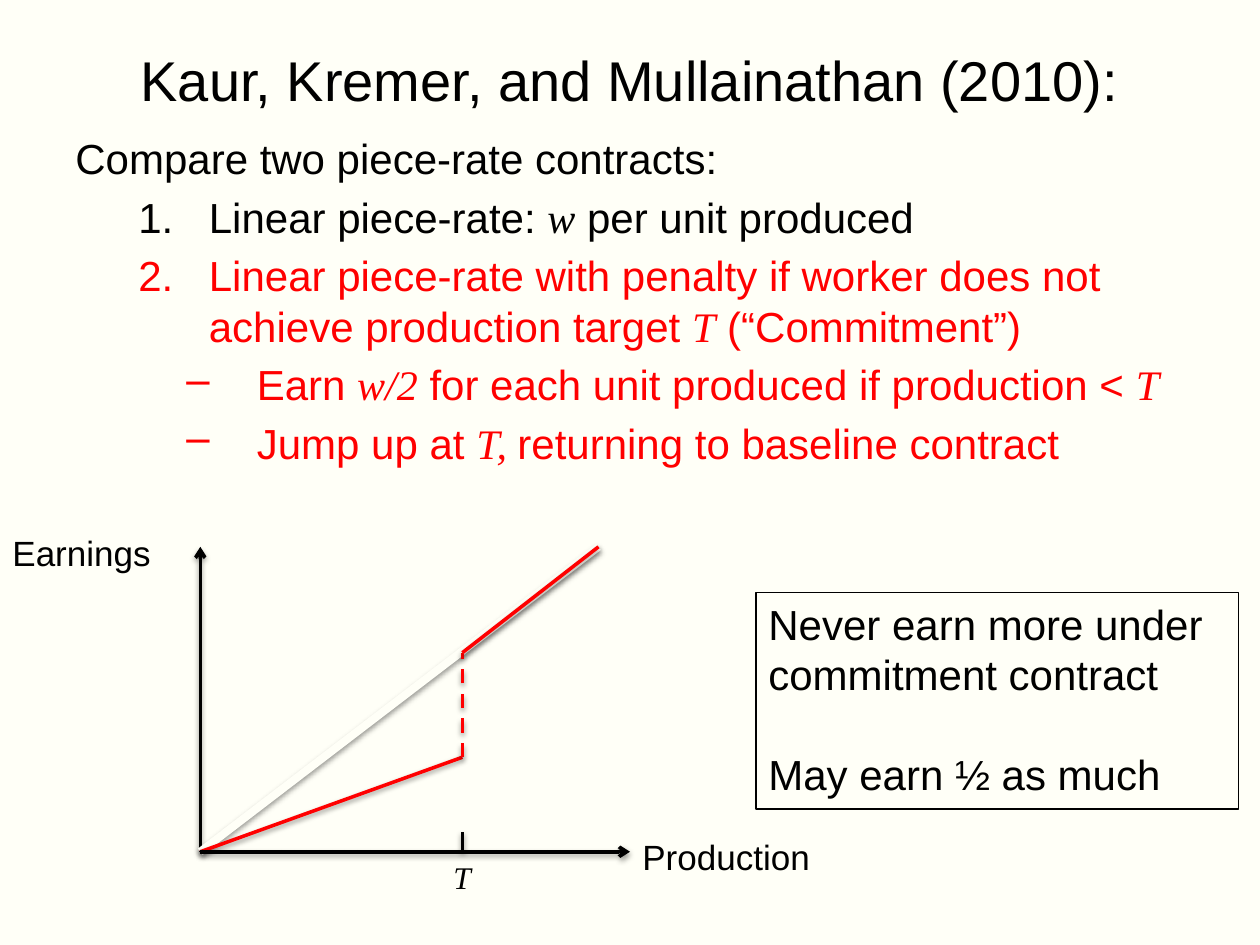
from lxml import etree
from pptx import Presentation
from pptx.dml.color import RGBColor
from pptx.enum import dml, shapes, text
from pptx.oxml import ns
from pptx.util import Inches, Pt

BLACK = RGBColor(0x00, 0x00, 0x00)
RED = RGBColor(0xFF, 0x00, 0x00)
CREAM = RGBColor(0xFF, 0xFF, 0xF7)
SANS, SERIF = "Arial", "Times New Roman"


def add_runs(p, parts, size, color=BLACK):
    """Add the parts in turn; those between asterisks are serif italic."""
    for i, part in enumerate(parts.split("*")):
        if part:
            r = p.add_run()
            r.text = part
            r.font.size = Pt(size)
            r.font.name = SERIF if i % 2 else SANS
            r.font.italic = bool(i % 2)
            r.font.color.rgb = color


def add_line(start, end, color=BLACK, width=2, dashed=False, arrow=False):
    ends = [Inches(v) for v in start + end]
    line = slide.shapes.add_connector(shapes.MSO_CONNECTOR.STRAIGHT, *ends)
    line.line.color.rgb = color
    line.line.width = Pt(width)
    if dashed:
        line.line.dash_style = dml.MSO_LINE.DASH
    if arrow:
        etree.SubElement(line.line._get_or_add_ln(), ns.qn("a:tailEnd"), type="arrow")
    effects = etree.SubElement(line._element.spPr, ns.qn("a:effectLst"))
    shadow = etree.SubElement(effects, ns.qn("a:outerShdw"), blurRad=str(Pt(3.1)),
                              dist=str(Pt(1.6)), dir="5400000", rotWithShape="0")
    tint = etree.SubElement(shadow, ns.qn("a:srgbClr"), val="000000")
    etree.SubElement(tint, ns.qn("a:alpha"), val="38000")


prs = Presentation()
prs.slide_width, prs.slide_height = Inches(10), Inches(7.5)
slide = prs.slides.add_slide(prs.slide_layouts[5])
slide.background.fill.solid()
slide.background.fill.fore_color.rgb = CREAM

# Title
title = slide.shapes.title
title.left, title.top, title.width, title.height = map(Inches, (0.5, 0, 9, 1.25))
title.text_frame.vertical_anchor = text.MSO_ANCHOR.MIDDLE
p = title.text_frame.paragraphs[0]
p.alignment = text.PP_ALIGN.CENTER
add_runs(p, "Kaur, Kremer, and Mullainathan (2010):", 32)

# Contracts: level, left margin, hanging indent, colour, text
contracts = [
    (0, 0.38, 0.38, BLACK, "Compare two piece-rate contracts:"),
    (1, 1.06, 0.56, BLACK, "Linear piece-rate: *w* per unit produced"),
    (1, 1.06, 0.56, RED, "Linear piece-rate with penalty if worker does not "
                         "achieve production target *T* (“Commitment”)"),
    (2, 1.44, 0.56, RED, "Earn *w/2* for each unit produced if production < *T*"),
    (2, 1.44, 0.56, RED, "Jump up at *T, *returning to baseline contract"),
]
bullets = {1: ("a:buAutoNum", {"type": "arabicPeriod"}), 2: ("a:buChar", {"char": "–"})}
body = slide.shapes.add_textbox(Inches(0.5), Inches(1), Inches(9), Inches(4.95))
tf = body.text_frame
tf.word_wrap = True
for i, (level, margin, hang, color, words) in enumerate(contracts):
    p = tf.add_paragraph() if i else tf.paragraphs[0]
    p.level = level
    p.space_before = Pt(4.8)
    pPr = p._p.get_or_add_pPr()
    pPr.set("marL", str(Inches(margin)))
    pPr.set("indent", str(-Inches(hang)))
    if level:
        tag, attributes = bullets[level]
        etree.SubElement(pPr, ns.qn(tag), attributes)
    add_runs(p, words, 24, color)

# Earnings diagram
origin, top = (1.59, 6.76), (4.75, 4.34)
low, high = (3.67, 6.01), (3.67, 5.18)
add_line(origin, (1.59, 4.34), arrow=True)
add_line(origin, top, CREAM, 4.5)
add_line(origin, low, RED)
add_line(low, high, RED, dashed=True)
add_line(high, top, RED)
add_line((3.67, 6.76), (3.67, 6.6))
add_line(origin, (5, 6.76), arrow=True)

for words, size, *place in [
    ("*T*", 18, 3.5, 6.76, 0.42, 0.4),
    ("Earnings", 20, 0, 4.17, 1.58, 0.44),
    ("Production", 20, 5, 6.58, 2.17, 0.44),
]:
    label = slide.shapes.add_textbox(*map(Inches, place))
    label.text_frame.word_wrap = True
    add_runs(label.text_frame.paragraphs[0], words, size)

# Conclusion
box = slide.shapes.add_textbox(Inches(6), Inches(4.7), Inches(3.83), Inches(1.72))
box.line.color.rgb = BLACK
box.line.width = Pt(0.75)
tf = box.text_frame
tf.word_wrap = True
add_runs(tf.paragraphs[0], "Never earn more under commitment contract", 24)
p = tf.add_paragraph()
p.space_before = Pt(28)
add_runs(p, "May earn ½ as much", 24)

prs.save("out.pptx")
